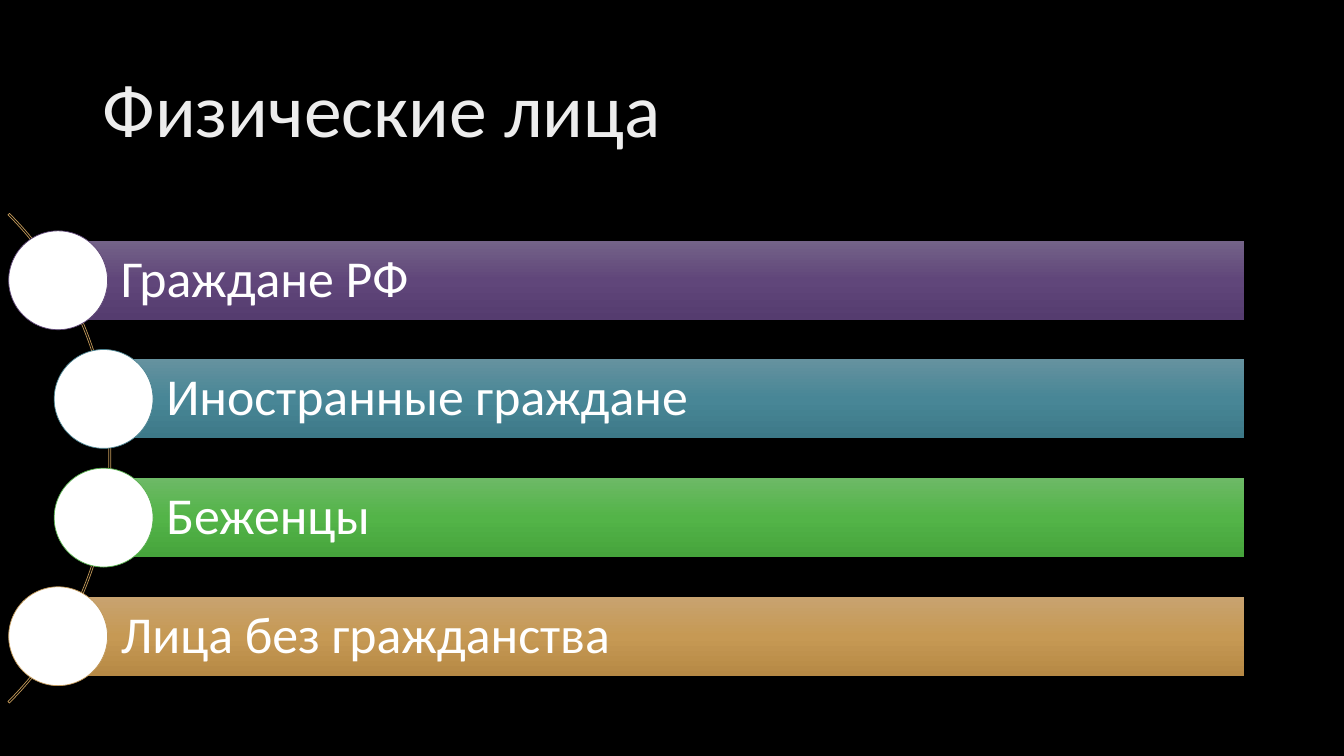
"""Build a slide that lists the kinds of natural persons along an arc."""
from lxml.etree import SubElement
from pptx import Presentation
from pptx.dml.color import RGBColor
from pptx.enum.shapes import MSO_SHAPE as SHAPE
from pptx.enum.text import MSO_ANCHOR as ANCHOR, PP_ALIGN as ALIGN
from pptx.oxml.ns import qn
from pptx.util import Pt


def color(value):
    return RGBColor.from_string(value)


def blend(fill, element, stops, angle):
    fill.gradient()
    fill.gradient_angle = angle
    stop_list = element.find(".//" + qn("a:gsLst"))
    for old_stop in list(stop_list):
        stop_list.remove(old_stop)
    for percent, value in stops:
        stop = SubElement(stop_list, qn("a:gs"), pos=str(percent * 1000))
        SubElement(stop, qn("a:srgbClr"), val=value)


deck = Presentation()
deck.slide_width = Pt(960)
deck.slide_height = Pt(540)
slide = deck.slides.add_slide(deck.slide_layouts[5])
slide.background.fill.solid()
slide.background.fill.fore_color.rgb = color("000000")

heading = slide.shapes.title
heading.left, heading.top, heading.width, heading.height = Pt(66), Pt(28.8), Pt(828), Pt(104.4)
heading.text_frame.vertical_anchor = ANCHOR.MIDDLE
heading_line = heading.text_frame.paragraphs[0]
heading_line.alignment = ALIGN.LEFT
heading_line.line_spacing = 0.9
heading_run = heading_line.add_run()
heading_run.text = "Физические лица"
heading_run.font.name = "Calibri"
heading_run.font.size = Pt(54)
blend(heading_run.font.fill, heading.element,
      [(0, "BFBFBF"), (28, "EDEDED"), (100, "FFFFFF")], 280)

arc = slide.shapes.add_shape(SHAPE.BLOCK_ARC, Pt(-415.4), Pt(80), Pt(494.6), Pt(494.6))
arc.adjustments[0] = 189
arc.adjustments[1] = 27
arc.adjustments[2] = 0.003
arc.shadow.inherit = False
arc.fill.background()
arc.line.color.rgb = color("C19859")
arc.line.width = Pt(0.5)

BAR_RIGHT, BAR_HEIGHT, DIAMETER = 888.8, 56.5, 70.6
FIRST_MIDDLE, STEP = 200.2, 84.75
groups = [
    ("Граждане РФ", 41.5, "604878", ("746388", "60467A", "553C6F")),
    ("Иностранные граждане", 74, "4C8492", ("65929F", "488696", "3D7988")),
    ("Беженцы", 74, "57AF4D", ("6DB966", "53B448", "46A43C")),
    ("Лица без гражданства", 41.5, "C19859", ("C8A370", "C69954", "B68945")),
]
for index, (label, center, outline, shades) in enumerate(groups):
    middle = FIRST_MIDDLE + index * STEP
    bar = slide.shapes.add_shape(SHAPE.RECTANGLE, Pt(center), Pt(middle - BAR_HEIGHT / 2),
                                 Pt(BAR_RIGHT - center), Pt(BAR_HEIGHT))
    bar.shadow.inherit = False
    blend(bar.fill, bar.element, zip((0, 50, 100), shades), 270)
    bar.line.fill.background()

    frame = bar.text_frame
    frame.vertical_anchor = ANCHOR.MIDDLE
    frame.margin_left = Pt(44.8)
    frame.margin_right = frame.margin_top = frame.margin_bottom = Pt(7.2)
    line = frame.paragraphs[0]
    line.alignment = ALIGN.LEFT
    line.line_spacing = 0.9
    run = line.add_run()
    run.text = label
    run.font.name = "Calibri"
    run.font.size = Pt(37)
    run.font.color.rgb = color("FFFFFF")

    circle = slide.shapes.add_shape(SHAPE.OVAL, Pt(center - DIAMETER / 2),
                                    Pt(middle - DIAMETER / 2), Pt(DIAMETER), Pt(DIAMETER))
    circle.shadow.inherit = False
    circle.fill.solid()
    circle.fill.fore_color.rgb = color("FFFFFF")
    circle.line.color.rgb = color(outline)
    circle.line.width = Pt(0.5)

deck.save("out.pptx")
